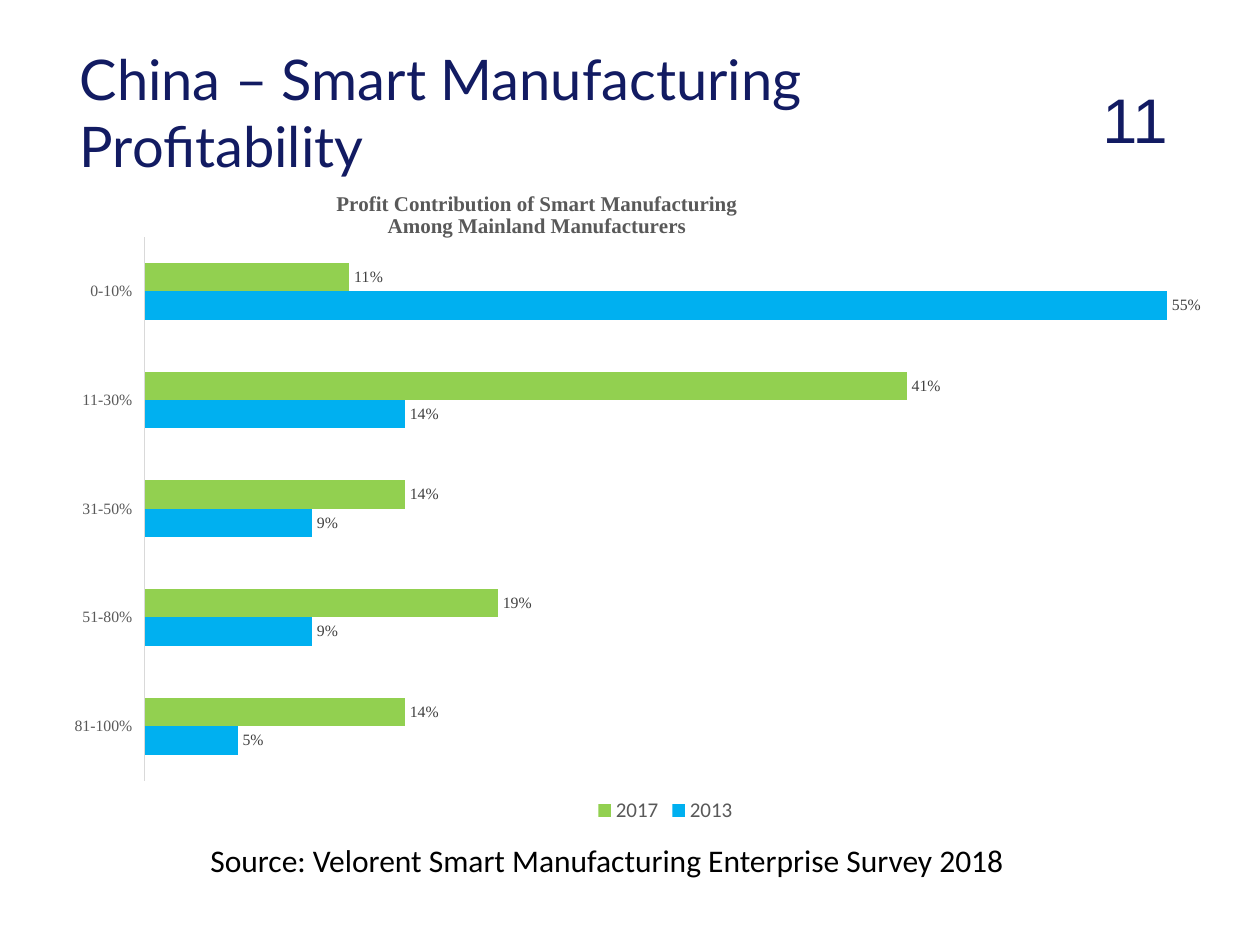
from lxml import etree
from pptx import Presentation
from pptx.chart.data import CategoryChartData
from pptx.dml.color import RGBColor
from pptx.enum.chart import (XL_CHART_TYPE, XL_LABEL_POSITION, XL_LEGEND_POSITION,
                             XL_TICK_LABEL_POSITION, XL_TICK_MARK)
from pptx.enum.text import MSO_ANCHOR, MSO_AUTO_SIZE, PP_ALIGN
from pptx.oxml.ns import qn
from pptx.util import Emu, Pt

NAVY = RGBColor(0x12, 0x1B, 0x62)
BLACK = RGBColor(0, 0, 0)
GREY = RGBColor(0x59, 0x59, 0x59)
DARK_GREY = RGBColor(0x40, 0x40, 0x40)
LIGHT_GREY = RGBColor(0xD9, 0xD9, 0xD9)
BLUE = RGBColor(0x00, 0xB0, 0xF0)
GREEN = RGBColor(0x92, 0xD0, 0x50)

LEFT, CENTER = PP_ALIGN.LEFT, PP_ALIGN.CENTER
SERIF = "Times New Roman"
EMU_PER_PX = 914400 / 126

CATEGORIES = ["81-100%", "51-80%", "31-50%", "11-30%", "0-10%"]
SERIES = [
    ("2013", BLUE, [0.05, 0.09, 0.09, 0.14, 0.55]),
    ("2017", GREEN, [0.14, 0.19, 0.14, 0.41, 0.11]),
]


def px(n):
    return Emu(round(n * EMU_PER_PX))


def set_font(font, size, name, color, bold=False):
    font.size, font.name, font.bold = Pt(size), name, bold
    font.color.rgb = color


def write(tf, text, size=18, name="Calibri", color=BLACK, bold=False, align=LEFT):
    tf.text = text
    for p in tf.paragraphs:
        p.alignment = align
        for r in p.runs:
            set_font(r.font, size, name, color, bold)


def place(sp, box):
    sp.left, sp.top, sp.width, sp.height = map(px, box)
    tf = sp.text_frame
    tf.word_wrap = True
    tf.vertical_anchor = MSO_ANCHOR.TOP
    tf.auto_size = MSO_AUTO_SIZE.SHAPE_TO_FIT_TEXT
    return tf


def add_text(s, box, text, **fmt):
    write(place(s.shapes.add_textbox(0, 0, 0, 0), box), text, **fmt)


def set_layout(parent, **values):
    """Give a chart part a manual layout, in fractions of the chart."""
    layout = parent.find(qn("c:layout"))
    if layout is None:
        layout = etree.Element(qn("c:layout"))
        parent.insert(0, layout)
    manual = etree.SubElement(layout, qn("c:manualLayout"))
    for tag, value in values.items():
        etree.SubElement(manual, qn("c:" + tag)).set("val", str(value))


def add_header(s, box):
    x, y, w, h = box
    write(place(s.shapes.title, (x, y, 995, 81)),
          "China – Smart Manufacturing Profitability", size=32, name="Lato", color=NAVY)
    add_text(s, (x + w - 98, y + 36, 98, 89), "11",
             size=36, name="Arial", color=NAVY, align=CENTER)


def format_axes(chart):
    cat = chart.category_axis
    cat.major_tick_mark = cat.minor_tick_mark = XL_TICK_MARK.NONE
    cat.tick_label_position = XL_TICK_LABEL_POSITION.LOW
    cat.format.line.color.rgb = LIGHT_GREY
    cat.format.line.width = Pt(0.75)
    set_font(cat.tick_labels.font, 9, SERIF, GREY)
    val = chart.value_axis
    val.minimum_scale, val.maximum_scale = 0, 0.6
    val.has_major_gridlines = False
    val.visible = False


def add_profit_chart(s, box):
    data = CategoryChartData(number_format="0%")
    data.categories = CATEGORIES
    for name, _, values in SERIES:
        data.add_series(name, values)
    chart = s.shapes.add_chart(XL_CHART_TYPE.BAR_CLUSTERED, *map(px, box), data).chart
    set_font(chart.font, 10, "Calibri", BLACK)

    chart.has_title = True
    title = chart.chart_title
    write(title.text_frame,
          "Profit Contribution of Smart Manufacturing\nAmong Mainland Manufacturers",
          size=12, name=SERIF, color=GREY, bold=True, align=CENTER)
    title.include_in_layout = False
    set_layout(title._element, xMode="edge", yMode="edge", x=0.22, y=0.01)
    set_layout(chart.plots[0]._element.getparent(), layoutTarget="inner",
               xMode="edge", yMode="edge", x=0.062, y=0.088, w=0.938, h=0.839)

    format_axes(chart)
    plot = chart.plots[0]
    plot.gap_width, plot.overlap = 182, 0
    plot.vary_by_categories = False
    for series, (_, color, _) in zip(plot.series, SERIES):
        series.format.fill.solid()
        series.format.fill.fore_color.rgb = color
        labels = series.data_labels
        labels.show_value = True
        labels.number_format, labels.number_format_is_linked = "0%", False
        labels.position = XL_LABEL_POSITION.OUTSIDE_END
        set_font(labels.font, 9, SERIF, DARK_GREY)

    chart.has_legend = True
    chart.legend.position = XL_LEGEND_POSITION.BOTTOM
    chart.legend.include_in_layout = False
    set_font(chart.legend.font, 12, "Calibri", GREY)


def main():
    prs = Presentation()
    prs.slide_width, prs.slide_height = px(1260), px(945)
    s = prs.slides.add_slide(prs.slide_layouts[5])
    add_header(s, (67, 38, 1117, 125))
    add_profit_chart(s, (71, 180, 1189, 648))
    add_text(s, (198, 835, 864, 89),
             "Source: Velorent Smart Manufacturing Enterprise Survey 2018")
    prs.save("out.pptx")


if __name__ == "__main__":
    main()
